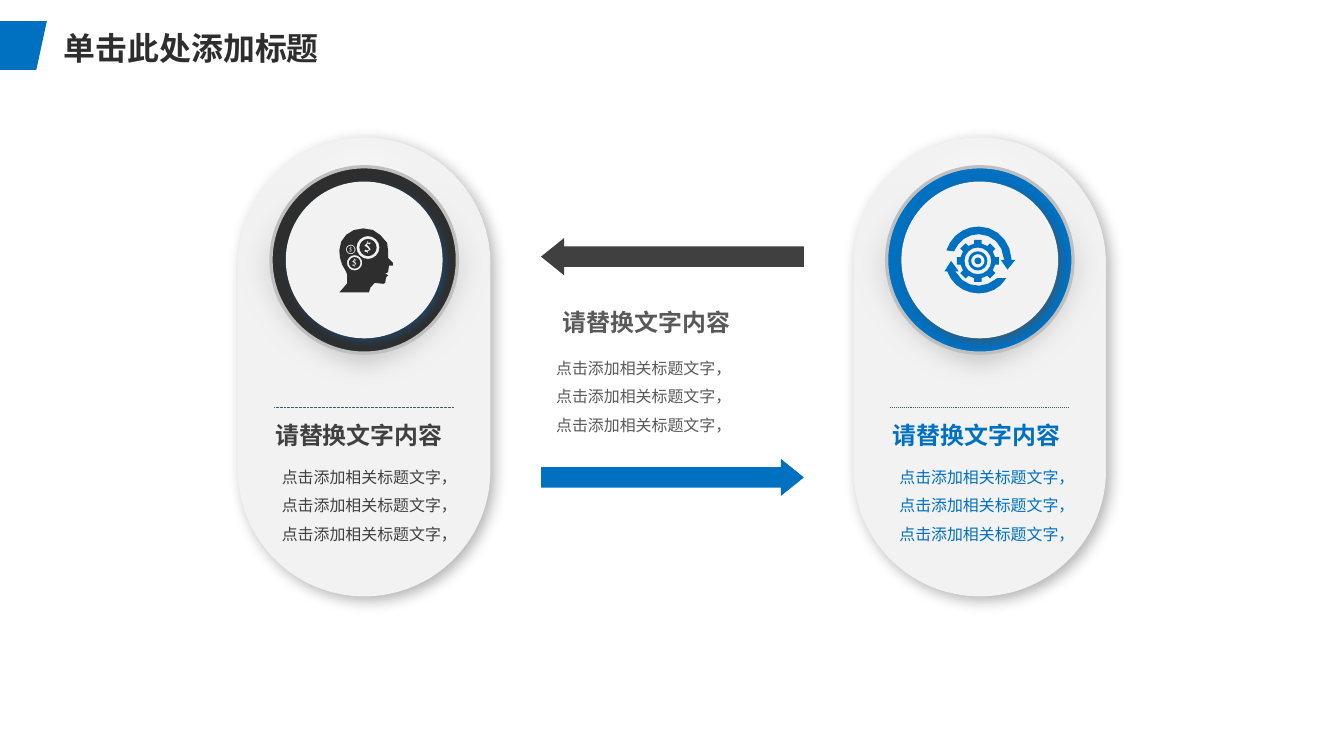
"""Build a slide with two facing cards that exchange arrows."""
import math
from dataclasses import dataclass
from typing import Optional

import lxml.etree
import pptx
import pptx.dml.color
import pptx.enum.dml
import pptx.enum.shapes
import pptx.oxml.ns
import pptx.util

RGB = pptx.dml.color.RGBColor
BLUE = RGB(0x00, 0x70, 0xC0)
INK = RGB(0x2E, 0x2E, 0x2E)
DARK = RGB(0x40, 0x40, 0x40)
GREY = RGB(0x59, 0x59, 0x59)
SILVER = RGB(0xBF, 0xBF, 0xBF)
PALE = RGB(0xF2, 0xF2, 0xF2)
WHITE = RGB(0xFF, 0xFF, 0xFF)
BLACK = RGB(0x00, 0x00, 0x00)
NAVY = RGB(0x1F, 0x4E, 0x79)
SMOKE = RGB(0x52, 0x52, 0x52)
TEAL = RGB(0x3C, 0x5E, 0x67)

SHAPE = pptx.enum.shapes.MSO_SHAPE
qn = pptx.oxml.ns.qn
Inches = pptx.util.Inches
Pt = pptx.util.Pt
Contour = list[tuple[float, ...]]


@dataclass
class Shadow:
    color: RGB
    alpha: int
    blur: float
    dist: float


@dataclass
class Note:
    x: float
    y: float
    w: float
    body_x: float
    body_y: float
    body_w: float
    color: RGB


@dataclass
class Card:
    cx: float
    ring: RGB
    glow: RGB
    rule_width: float
    note: Note


@dataclass
class Arrow:
    y: float
    color: RGB
    flip: bool


CARDS = [
    Card(3.81, INK, NAVY, 0.5, Note(2.78, 4.35, 2.46, 2.85, 4.74, 2.1, DARK)),
    Card(10.25, BLUE, SMOKE, 0.75, Note(9.24, 4.35, 2.76, 9.31, 4.74, 2.11, BLUE)),
]
CENTER_NOTE = Note(5.79, 3.17, 2.49, 5.72, 3.6, 2.73, GREY)
ARROWS = [Arrow(2.49, DARK, True), Arrow(4.8, BLUE, False)]

FLAG = [(0, 0.22), (0.49, 0.22), (0.38, 0.73), (0, 0.73)]
UPPER_ARROW = [
    (10.58, 2.7), (10.57, 2.52, 10.42, 2.37, 10.24, 2.37),
    (10.08, 2.37, 9.95, 2.47, 9.9, 2.62), (9.98, 2.63),
    (10.03, 2.52, 10.12, 2.45, 10.24, 2.45), (10.38, 2.45, 10.49, 2.56, 10.5, 2.7),
    (10.51, 2.72), (10.47, 2.72), (10.54, 2.82), (10.62, 2.72), (10.58, 2.72)]
LOWER_ARROW = [
    (10.42, 2.92), (10.37, 2.96, 10.3, 2.99, 10.24, 2.99),
    (10.14, 2.99, 10.05, 2.94, 10.01, 2.86), (9.99, 2.84), (10.03, 2.84),
    (9.95, 2.73), (9.88, 2.84), (9.91, 2.84),
    (9.96, 2.98, 10.09, 3.07, 10.24, 3.07), (10.35, 3.07, 10.46, 3.02, 10.52, 2.92),
    (10.53, 2.91), (10.43, 2.91)]
HEAD = [
    (4.11, 2.75), (4.06, 2.7), (4.06, 2.62), (4.05, 2.54), (3.98, 2.46),
    (3.94, 2.41, 3.87, 2.39, 3.8, 2.39), (3.66, 2.39, 3.55, 2.49, 3.55, 2.62),
    (3.55, 2.7, 3.57, 2.77, 3.62, 2.84), (3.62, 2.84, 3.69, 2.98, 3.55, 3.06), (3.86, 3.06),
    (3.86, 3.06, 3.88, 2.96, 3.92, 2.96), (4.01, 2.97), (4.03, 2.96), (4.04, 2.9),
    (4.06, 2.88), (4.03, 2.86), (4.06, 2.85), (4.07, 2.78), (4.11, 2.78)]
DOLLAR = [
    (0, 0.04), (0, 0.06), (-0.01, 0.06), (-0.01, 0.05), (-0.04, 0.04), (-0.03, 0.02),
    (-0.01, 0.03), (0.01, 0.02), (-0.01, 0), (-0.04, -0.02), (-0.01, -0.05), (-0.01, -0.07),
    (0, -0.07), (0, -0.05), (0.03, -0.05), (0.02, -0.03), (0, -0.04), (-0.01, -0.03),
    (0.01, -0.01), (0.03, 0.02)]
COINS = [(3.67, 2.61, 0.04, 0.05), (3.85, 2.59, 0.09, 0.12), (3.71, 2.75, 0.06, 0.08)]
HUB = (10.23, 2.73)
CURVE_STEP = 0.1
CIRCLE_SIDES = 16


def circle(cx: float, cy: float, radius: float) -> Contour:
    angles = [math.tau * i / CIRCLE_SIDES for i in range(CIRCLE_SIDES)]
    return [(cx + radius * math.cos(a), cy + radius * math.sin(a)) for a in angles]


def gear(cx: float, cy: float) -> Contour:
    tooth = [(0.18, -0.04), (0.22, -0.04), (0.22, 0.04), (0.18, 0.04)]
    turns = [(math.cos(k * math.pi / 4), math.sin(k * math.pi / 4)) for k in range(8)]
    return [(cx + x * c - y * n, cy + x * n + y * c) for c, n in turns for x, y in tooth]


def dollar(cx: float, cy: float, radius: float) -> Contour:
    k = radius / 0.09
    return [(cx + x * k, cy + y * k) for x, y in DOLLAR]


def flatten(contour: Contour) -> list[tuple[int, int]]:
    points = [contour[0]]
    for seg in contour[1:]:
        if len(seg) == 2:
            points.append(seg)
            continue
        curve = [points[-1], seg[:2], seg[2:4], seg[4:]]
        steps = math.ceil(math.dist(curve[0], curve[3]) / CURVE_STEP)
        for t in (i / steps for i in range(1, steps + 1)):
            weights = [math.comb(3, i) * t**i * (1 - t)**(3 - i) for i in range(4)]
            points.append(tuple(sum(w * q[axis] for w, q in zip(weights, curve)) for axis in (0, 1)))
    return [(Inches(x), Inches(y)) for x, y in points]


def paint(sp, color: RGB) -> None:
    sp.shadow.inherit = False
    sp.fill.solid()
    sp.fill.fore_color.rgb = color
    sp.line.fill.background()


def add_outline(s, color: RGB, *contours: Contour) -> None:
    first, *others = [flatten(c) for c in contours]
    builder = s.shapes.build_freeform(*first[0])
    builder.add_line_segments(first[1:])
    for points in others:
        builder.move_to(*points[0])
        builder.add_line_segments(points[1:])
    paint(builder.convert_to_shape(), color)


def add_preset(s, kind, x: float, y: float, w: float, h: float, color: RGB,
               shadow: Optional[Shadow] = None):
    sp = s.shapes.add_shape(kind, Inches(x), Inches(y), Inches(w), Inches(h))
    paint(sp, color)
    if shadow:
        effects = sp._element.spPr.find(qn("a:effectLst"))
        outer = lxml.etree.SubElement(
            effects, qn("a:outerShdw"), blurRad=str(Pt(shadow.blur)), dist=str(Pt(shadow.dist)),
            dir="2700000", algn="tl", rotWithShape="0")
        clr = lxml.etree.SubElement(outer, qn("a:srgbClr"), val=str(shadow.color))
        lxml.etree.SubElement(clr, qn("a:alpha"), val=str(shadow.alpha * 1000))
    return sp


def add_disc(s, cx: float, cy: float, size: float, color: RGB, shadow: Optional[Shadow] = None):
    return add_preset(s, SHAPE.OVAL, cx - size / 2, cy - size / 2, size, size, color, shadow)


def add_text(s, x: float, y: float, w: float, h: float, lines: list[str], size: int, font: str,
             color: RGB, bold: bool = False, spacing: Optional[float] = None) -> None:
    tf = s.shapes.add_textbox(Inches(x), Inches(y), Inches(w), Inches(h)).text_frame
    tf.word_wrap = True
    tf.text = "\n".join(lines)
    for p in tf.paragraphs:
        p.line_spacing = spacing
        p.font.size, p.font.name, p.font.bold = Pt(size), font, bold
        p.font.color.rgb = color


def add_note(s, note: Note) -> None:
    add_text(s, note.body_x, note.body_y, note.body_w, 0.97, ["点击添加相关标题文字，"] * 3,
             12, "Arial", note.color, spacing=1.5)
    add_text(s, note.x, note.y, note.w, 0.4, ["请替换文字内容"], 18, "Calibri", note.color, True)


def add_card(s, card: Card) -> None:
    halo = add_disc(s, card.cx, 2.72, 2.69, WHITE)
    halo.fill.gradient()
    halo.fill.gradient_angle = 270
    for stop, color in zip(halo.fill.gradient_stops, (WHITE, SILVER)):
        stop.color.rgb = color
    effects = halo._element.spPr.find(qn("a:effectLst"))
    lxml.etree.SubElement(effects, qn("a:softEdge"), rad=str(Pt(18)))
    ring = add_disc(s, card.cx, 2.72, 1.95, card.ring)
    ring.line.color.rgb, ring.line.width = SILVER, Pt(2.5)
    add_disc(s, card.cx, 2.72, 1.64, PALE, Shadow(card.glow, 64, 6, 3))
    add_note(s, card.note)
    rule = s.shapes.add_connector(pptx.enum.shapes.MSO_CONNECTOR.STRAIGHT, Inches(card.cx - 0.94),
                                  Inches(4.26), Inches(card.cx + 0.94), Inches(4.26))
    rule.line.color.rgb, rule.line.width = TEAL, Pt(card.rule_width)
    rule.line.dash_style = pptx.enum.dml.MSO_LINE.ROUND_DOT
    lxml.etree.SubElement(rule._element.spPr, qn("a:effectLst"))


def main() -> None:
    prs = pptx.Presentation()
    prs.slide_width, prs.slide_height = Inches(14.06), Inches(7.91)
    s = prs.slides.add_slide(prs.slide_layouts[6])
    add_outline(s, BLUE, FLAG)
    for card in CARDS:
        panel = add_preset(s, SHAPE.ROUNDED_RECTANGLE, card.cx - 1.32, 1.44, 2.64, 4.8, PALE,
                           Shadow(BLACK, 29, 11, 4))
        panel.adjustments[0] = 0.5
    for card in CARDS:
        add_card(s, card)
    for arrow in ARROWS:
        sp = add_preset(s, SHAPE.RIGHT_ARROW, 5.66, arrow.y, 2.75, 0.39, arrow.color)
        sp.adjustments[0], sp.adjustments[1] = 0.55, 0.62
        if arrow.flip:
            sp._element.spPr.find(qn("a:xfrm")).set("flipH", "1")
    add_note(s, CENTER_NOTE)
    for outline in (UPPER_ARROW, LOWER_ARROW):
        add_outline(s, BLUE, outline)
    add_outline(s, BLUE, gear(*HUB), circle(*HUB, 0.14))
    add_outline(s, BLUE, circle(*HUB, 0.1), circle(*HUB, 0.07))
    add_disc(s, *HUB, 0.07, BLUE)
    for x, y, radius, _ in COINS:
        add_outline(s, INK, circle(x, y, radius), dollar(x, y, radius))
    add_outline(s, INK, HEAD, *(circle(x, y, hole) for x, y, _, hole in COINS))
    add_text(s, 0.57, 0.25, 12.36, 0.5, ["单击此处添加标题"], 24, "Arial", INK, True)
    prs.save("out.pptx")


if __name__ == "__main__":
    main()
